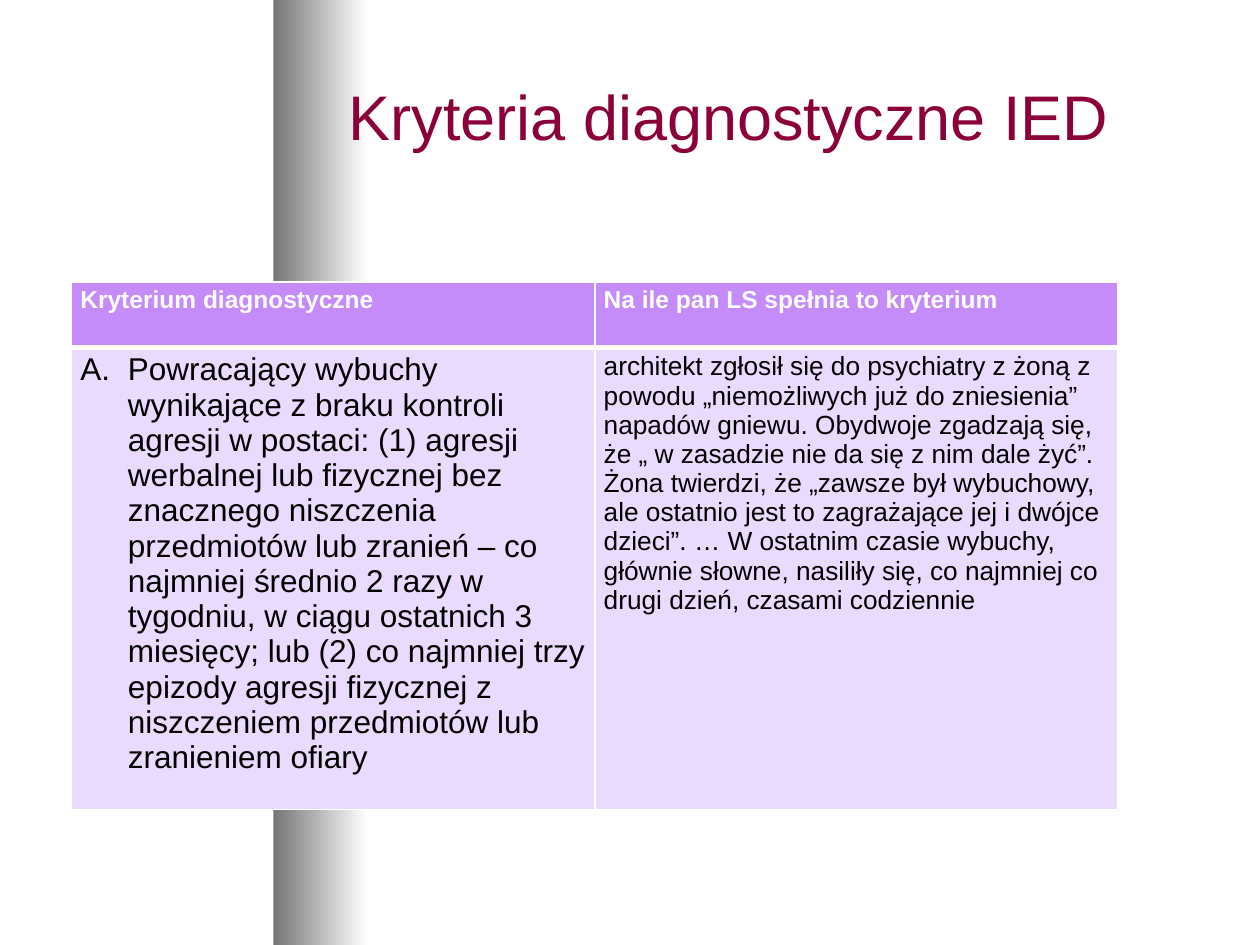
from dataclasses import dataclass

from lxml.etree import SubElement
from pptx import Presentation
from pptx.dml.color import RGBColor
from pptx.enum.shapes import MSO_SHAPE
from pptx.enum.text import MSO_ANCHOR, PP_ALIGN
from pptx.oxml.ns import qn
from pptx.util import Cm, Pt

FONT = "Arial"
WHITE, BLACK = "FFFFFF", "000000"
WINE, VIOLET, LILAC = "8C0039", "C58BF9", "EADAFD"
SHADE = "767676"


@dataclass
class Entry:
    text: str
    size: float
    label: str = ""


@dataclass
class Row:
    high: float
    fill: str
    ink: str
    bold: bool
    top: float
    base: float
    cells: tuple[Entry, ...]


ROWS = (
    Row(1.32, VIOLET, WHITE, True, 1, 3, (
        Entry("Kryterium diagnostyczne", 14),
        Entry("Na ile pan LS spełnia to kryterium", 14),
    )),
    Row(9.32, LILAC, BLACK, False, 3, 1, (
        Entry("Powracający wybuchy wynikające z braku kontroli agresji w postaci: "
              "(1) agresji werbalnej lub fizycznej bez znacznego niszczenia "
              "przedmiotów lub zranień – co najmniej średnio 2 razy w tygodniu, "
              "w ciągu ostatnich 3 miesięcy; lub (2) co najmniej trzy epizody "
              "agresji fizycznej z niszczeniem przedmiotów lub zranieniem ofiary",
              18, "alphaUcPeriod"),
        Entry("architekt zgłosił się do psychiatry z żoną z powodu „niemożliwych "
              "już do zniesienia” napadów gniewu. Obydwoje zgadzają się, że "
              "„ w zasadzie nie da się z nim dale żyć”. Żona twierdzi, że „zawsze "
              "był wybuchowy, ale ostatnio jest to zagrażające jej i dwójce "
              "dzieci”. … W ostatnim czasie wybuchy, głównie słowne, nasiliły się, "
              "co najmniej co drugi dzień, czasami codziennie", 15),
    )),
)


def color(code: str) -> RGBColor:
    return RGBColor.from_string(code)


def write(frame, text: str, *, size: float, ink: str,
          bold: bool = False, label: str = "") -> None:
    para = frame.paragraphs[0]
    para.alignment = PP_ALIGN.LEFT
    if label:
        props = para._p.get_or_add_pPr()
        props.set("marL", str(Cm(0.96)))
        props.set("indent", str(-Cm(0.96)))
        SubElement(props, qn("a:buFont"), typeface="+mj-lt")
        SubElement(props, qn("a:buAutoNum"), type=label)
    run = para.add_run()
    run.text = text
    run.font.name = FONT
    run.font.size = Pt(size)
    run.font.bold = bold
    run.font.color.rgb = color(ink)


def edge(cell, side: str, width: float) -> None:
    line = SubElement(cell._tc.get_or_add_tcPr(), qn(f"a:ln{side}"), w=str(Pt(width)))
    fill = SubElement(line, qn("a:solidFill"))
    SubElement(fill, qn("a:srgbClr"), val=WHITE)


def add_band(slide) -> None:
    band = slide.shapes.add_shape(MSO_SHAPE.RECTANGLE, Cm(5.51), 0, Cm(1.9), Cm(19.05))
    band.shadow.inherit = False
    band.line.fill.background()
    band.fill.gradient()
    band.fill.gradient_angle = 0
    for stop, code in zip(band.fill.gradient_stops, (SHADE, WHITE)):
        stop.color.rgb = color(code)
    # Keep the band behind the title
    slide.shapes._spTree.insert(2, band._element)


def add_title(slide, text: str) -> None:
    title = slide.shapes.title
    title.left, title.top = Cm(6.78), Cm(0.64)
    title.width, title.height = Cm(17.78), Cm(3.38)
    title.text_frame.vertical_anchor = MSO_ANCHOR.MIDDLE
    write(title.text_frame, text, size=36, ink=WINE)


def add_grid(slide, rows: tuple[Row, ...]) -> None:
    high = sum(row.high for row in rows)
    frame = slide.shapes.add_table(len(rows), 2, Cm(1.44), Cm(5.68), Cm(21.1), Cm(high))
    grid = frame.table
    for line, row in zip(grid.rows, rows):
        line.height = Cm(row.high)
        for cell, entry in zip(line.cells, row.cells):
            sides = {"L": 1, "R": 1, "T": row.top, "B": row.base}
            for side, width in sides.items():
                edge(cell, side, width)
            cell.fill.solid()
            cell.fill.fore_color.rgb = color(row.fill)
            cell.margin_left = cell.margin_right = Cm(0.18)
            cell.margin_top = cell.margin_bottom = Cm(0.1)
            write(cell.text_frame, entry.text, size=entry.size, ink=row.ink,
                  bold=row.bold, label=entry.label)


def main() -> None:
    deck = Presentation()
    deck.slide_width, deck.slide_height = Cm(25.4), Cm(19.05)
    slide = deck.slides.add_slide(deck.slide_layouts[5])
    slide.background.fill.solid()
    slide.background.fill.fore_color.rgb = color(WHITE)
    add_band(slide)
    add_title(slide, "Kryteria diagnostyczne IED")
    add_grid(slide, ROWS)
    deck.save("out.pptx")


if __name__ == "__main__":
    main()
